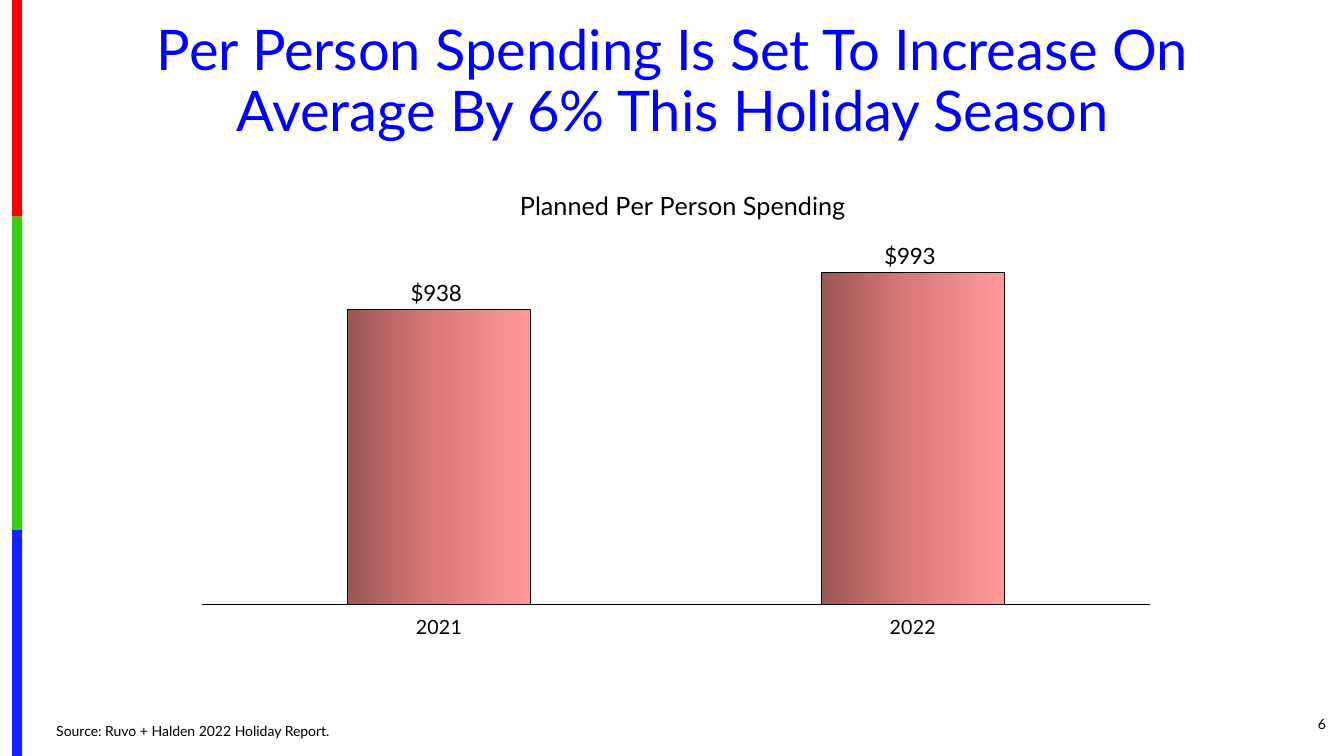
from pptx import Presentation
from pptx.chart.data import CategoryChartData
from pptx.dml.color import RGBColor
from pptx.enum.chart import XL_CHART_TYPE, XL_LABEL_POSITION, XL_TICK_LABEL_POSITION, XL_TICK_MARK
from pptx.enum.shapes import MSO_SHAPE
from pptx.enum.text import MSO_ANCHOR, MSO_AUTO_SIZE, PP_ALIGN
from pptx.oxml import parse_xml
from pptx.oxml.ns import nsdecls, qn
from pptx.util import Inches, Pt

COLUMN = XL_CHART_TYPE.COLUMN_CLUSTERED
OUTSIDE_END = XL_LABEL_POSITION.OUTSIDE_END
LABELS_LOW = XL_TICK_LABEL_POSITION.LOW
NO_TICK = XL_TICK_MARK.NONE
RECT = MSO_SHAPE.RECTANGLE
TOP, MIDDLE = MSO_ANCHOR.TOP, MSO_ANCHOR.MIDDLE
LEFT, CENTER, RIGHT = PP_ALIGN.LEFT, PP_ALIGN.CENTER, PP_ALIGN.RIGHT

FONT = "Lato"
BLACK = "000000"
TITLE = "Per Person Spending Is Set To Increase On Average By 6% This Holiday Season"
CHART_TITLE = "Planned Per Person Spending"
SPENDING = {"2021": 938, "2022": 993}
DOLLARS = '"$"#,##0_);[Red]\\("$"#,##0\\)'
STRIPES = [("FE0000", 2.15), ("36CF12", 3.11), ("1322FE", 2.24)]
GRADIENT = [(0, "9C5656"), (50, "DD7B7B"), (100, "FF9999")]
NOTES = [
    ("6", (12.17, 6.98, 1.08, 0.4), RIGHT, MIDDLE),
    ("Source: Ruvo + Halden 2022 Holiday Report.", (0.46, 7.12, 7.83, 0.27), LEFT, TOP),
]


def rgb(color):
    return RGBColor.from_string(color)


def style(font, size, color=BLACK):
    font.name = FONT
    font.size = Pt(size)
    font.bold = False
    font.color.rgb = rgb(color)


def outline(line):
    line.color.rgb = rgb(BLACK)
    line.width = Pt(0.75)


def set_layout(parent, index, **places):
    old = parent.find(qn("c:layout"))
    if old is not None:
        parent.remove(old)
    parts = "".join(f'<c:{tag} val="{val}"/>' for tag, val in places.items())
    parent.insert(index, parse_xml(
        f'<c:layout {nsdecls("c")}><c:manualLayout>{parts}</c:manualLayout></c:layout>'))


def add_stripes(slide):
    top = 0
    for color, height in STRIPES:
        sp = slide.shapes.add_shape(RECT, Inches(0.12), Inches(top), Inches(0.1), Inches(height))
        sp.shadow.inherit = False
        sp.fill.solid()
        sp.fill.fore_color.rgb = rgb(color)
        sp.line.fill.background()
        top += height


def add_title(slide):
    sp = slide.shapes.title
    sp.left, sp.top, sp.width, sp.height = map(Inches, (0.46, 0.17, 12.42, 0.71))
    tf = sp.text_frame
    tf.text = TITLE
    tf.word_wrap = True
    tf.auto_size = MSO_AUTO_SIZE.NONE
    tf.vertical_anchor = TOP
    p = tf.paragraphs[0]
    p.alignment = CENTER
    p.line_spacing = 0.9
    style(p.runs[0].font, 40, "0000FF")


def add_note(slide, text, box, align, anchor):
    tf = slide.shapes.add_textbox(*map(Inches, box)).text_frame
    tf.text = text
    tf.word_wrap = True
    tf.vertical_anchor = anchor
    p = tf.paragraphs[0]
    p.alignment = align
    style(p.runs[0].font, 10)


def add_spending_chart(slide):
    data = CategoryChartData()
    data.categories = list(SPENDING)
    data.add_series("Series 1", list(SPENDING.values()))
    box = map(Inches, (1.8, 1.1, 9.74, 5.46))
    chart = slide.shapes.add_chart(COLUMN, *box, data).chart
    style(chart.font, 10)
    chart.has_legend = False

    chart.has_title = True
    tf = chart.chart_title.text_frame
    tf.text = CHART_TITLE
    style(tf.paragraphs[0].runs[0].font, 18)
    set_layout(chart.chart_title._element, 1, xMode="edge", yMode="edge", x=0.34, y=0.13)
    set_layout(chart._chartSpace.chart.plotArea, 0, layoutTarget="inner", xMode="edge",
               yMode="edge", x=0.021, y=0.163, w=0.965, h=0.734)

    axis = chart.value_axis
    axis.minimum_scale, axis.maximum_scale = 500, 1100
    axis.has_major_gridlines = False
    axis.visible = False
    axis = chart.category_axis
    axis.major_tick_mark = axis.minor_tick_mark = NO_TICK
    axis.tick_label_position = LABELS_LOW
    style(axis.tick_labels.font, 14)
    outline(axis.format.line)

    plot = chart.plots[0]
    plot.gap_width, plot.overlap = 159, -27
    plot.vary_by_categories = False
    series = plot.series[0]
    outline(series.format.line)
    stops = "".join(f'<a:gs pos="{pos * 1000}"><a:srgbClr val="{color}"/></a:gs>'
                    for pos, color in GRADIENT)
    series._element.get_or_add_spPr().insert(0, parse_xml(
        f'<a:gradFill {nsdecls("a")}><a:gsLst>{stops}</a:gsLst><a:lin ang="0"/></a:gradFill>'))
    labels = series.data_labels
    labels.show_value = True
    labels.position = OUTSIDE_END
    labels.number_format = DOLLARS
    labels.number_format_is_linked = False
    style(labels.font, 16)


def main():
    prs = Presentation()
    prs.slide_width, prs.slide_height = Inches(13.33), Inches(7.5)
    slide = prs.slides.add_slide(prs.slide_layouts[5])
    add_stripes(slide)
    add_title(slide)
    for note in NOTES:
        add_note(slide, *note)
    add_spending_chart(slide)
    prs.save("out.pptx")


if __name__ == "__main__":
    main()
